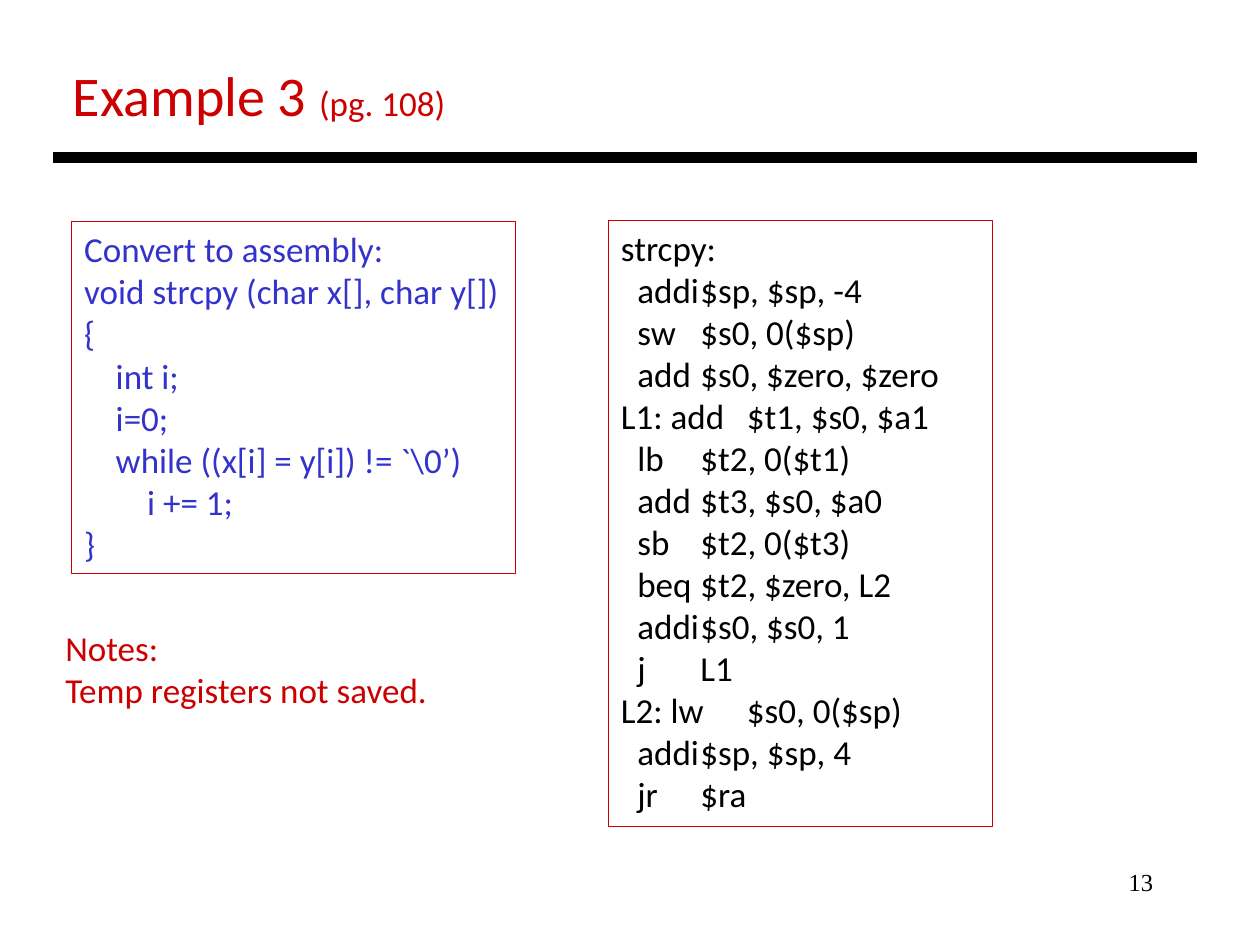
from lxml import etree
from pptx import Presentation
from pptx import util as u
from pptx.dml.color import RGBColor
from pptx.enum import shapes, text
from pptx.oxml.ns import qn

RED, BLUE, BLACK = "CC0000", "3333CC", "000000"
INDENT, OPCODE, OPERAND = u.Inches(0.25), u.Inches(0.13), u.Inches(0.94)

deck = Presentation()
deck.slide_width, deck.slide_height = u.Inches(10), u.Inches(7.5)
slide = deck.slides.add_slide(deck.slide_layouts[6])
col, row = deck.slide_width // 100, deck.slide_height // 75


def rgb(hex_color):
    return RGBColor.from_string(hex_color)


def add_lines(place, lines, color, border=None, size=20, font="Calibri",
              inset_right=0):
    """Add a box of (indent, text) lines; place is in columns and rows."""
    left, top, width, height = place
    box = slide.shapes.add_textbox(
        round(left * col), round(top * row), round(width * col), round(height * row))
    if border:
        box.line.color.rgb = rgb(border)
        box.line.width = u.Pt(0.75)
    frame = box.text_frame
    frame.word_wrap = True
    frame.margin_right = u.Inches(inset_right)
    for number, (indent, words) in enumerate(lines):
        line = frame.paragraphs[0] if number == 0 else frame.add_paragraph()
        line.text = words
        line.font.size = u.Pt(size)
        line.font.name = font
        line.font.color.rgb = rgb(color)
        properties = line._p.get_or_add_pPr()
        properties.set("marL", str(indent))
        properties.set("indent", "0")
        if "\t" in words:
            stops = etree.Element(qn("a:tabLst"))
            etree.SubElement(stops, qn("a:tab"), pos=str(OPERAND), algn="l")
            properties.insert(0, stops)
    return frame


page = add_lines((71.7, 68.3, 20.8, 5), [(0, "13")], BLACK, size=14,
                 font="Times New Roman", inset_right=0.1)
page.paragraphs[0].alignment = text.PP_ALIGN.RIGHT

title = add_lines((4.8, 4.3, 40, 6.4), [(0, "Example 3 ")], RED, size=32)
page_reference = title.paragraphs[0].add_run()
page_reference.text = "(pg. 108)"
page_reference.font.size = u.Pt(20)

rule = slide.shapes.add_connector(
    shapes.MSO_CONNECTOR.STRAIGHT,
    round(4.2 * col), round(12.5 * row), 95 * col, round(12.5 * row))
rule.line.color.rgb = rgb(BLACK)
rule.line.width = u.Pt(6)
etree.SubElement(rule._element.spPr, qn("a:effectLst"))

c_code = [
    (0, "Convert to assembly:"),
    (0, "void strcpy (char x[], char y[])"),
    (0, "{"),
    (INDENT, "int i;"),
    (INDENT, "i=0;"),
    (INDENT, "while ((x[i] = y[i]) != `\\0’)"),
    (2 * INDENT, "i += 1;"),
    (0, "}"),
]
add_lines((5.7, 17.6, 35.2, 27.9), c_code, BLUE, border=RED)

assembly = [
    "strcpy:",
    "addi\t$sp, $sp, -4",
    "sw\t$s0, 0($sp)",
    "add\t$s0, $zero, $zero",
    "L1: add\t$t1, $s0, $a1",
    "lb\t$t2, 0($t1)",
    "add\t$t3, $s0, $a0",
    "sb\t$t2, 0($t3)",
    "beq\t$t2, $zero, L2",
    "addi\t$s0, $s0, 1",
    "j\tL1",
    "L2: lw\t$s0, 0($sp)",
    "addi\t$sp, $sp, 4",
    "jr\t$ra",
]
add_lines((48.3, 17.5, 30.5, 48.1),
          [(0 if ":" in step else OPCODE, step) for step in assembly],
          BLACK, border=RED)

add_lines((4.2, 49.2, 31, 7.7),
          [(0, "Notes:"), (0, "Temp registers not saved.")], RED)

deck.save("out.pptx")
